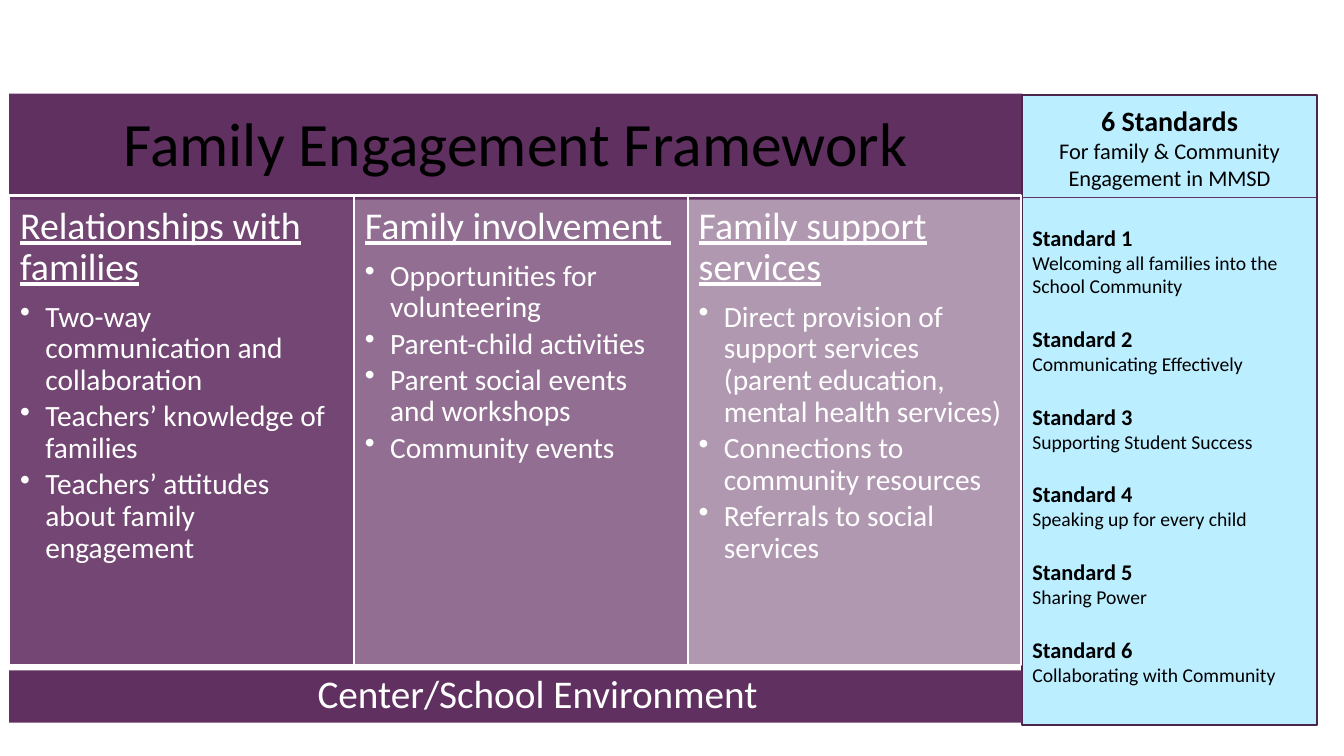
"""Build the Family Engagement Framework slide."""
import pptx
import pptx.dml.color
import pptx.enum.shapes
import pptx.enum.text
import pptx.oxml
import pptx.oxml.ns
import pptx.util
from pptx.util import Inches

TITLE = "Family Engagement Framework"
COLUMNS = [
    ("Relationships with families", 3.42, 90, [
        "Two-way communication and collaboration",
        "Teachers’ knowledge of families",
        "Teachers’ attitudes about family engagement"]),
    ("Family involvement ", 3.31, 70, [
        "Opportunities for volunteering",
        "Parent-child activities",
        "Parent social events and workshops",
        "Community events"]),
    ("Family support services", 3.31, 50, [
        "Direct provision of support services (parent education, mental health services)",
        "Connections to community resources",
        "Referrals to social services"]),
]
FOOTER = "Center/School Environment "
SIDE_TITLE = "6 Standards"
SIDE_SUBTITLE = "For family & Community Engagement in MMSD"
STANDARDS = [
    "Welcoming all families into the School Community",
    "Communicating Effectively",
    "Supporting Student Success",
    "Speaking up for every child",
    "Sharing Power",
    "Collaborating with Community",
]
BAR, PURPLE, SKY, EDGE = "603060", "653265", "BBEEFF", "4B254B"
WHITE, BLACK = "FFFFFF", "000000"
LEFT, MAIN_W = 0.09, 10.05
SIDE_X, SIDE_W = 10.14, 2.92
CENTER = pptx.enum.text.PP_ALIGN.CENTER
TOP = pptx.enum.text.MSO_ANCHOR.TOP
MIDDLE = pptx.enum.text.MSO_ANCHOR.MIDDLE


def rgb(color):
    return pptx.dml.color.RGBColor.from_string(color)


def child(parent, tag, **attrs):
    el = pptx.oxml.ns.qn(tag)
    el = parent.makeelement(el, attrs)
    parent.append(el)
    return el


def add_text(tf, text, size, color=BLACK, bold=False, underline=False, align=None,
             spacing=None, before=0, after=0, bullet=False):
    p = tf.paragraphs[0]
    if p.runs:
        p = tf.add_paragraph()
    p.alignment = align
    p.line_spacing = spacing
    p.space_before, p.space_after = pptx.util.Pt(before), pptx.util.Pt(after)
    if bullet:
        pPr = p._p.get_or_add_pPr()
        pPr.set("marL", str(Inches(0.25)))
        pPr.set("indent", str(Inches(-0.25)))
        child(pPr, "a:buChar", char="•")
    r = p.add_run()
    r.text = text
    r.font.name, r.font.size = "Calibri", pptx.util.Pt(size)
    r.font.bold, r.font.underline = bold, underline
    r.font.color.rgb = rgb(color)


def set_frame(sp, inset_x=0.1, inset_y=0.05, anchor=TOP):
    tf = sp.text_frame
    tf.word_wrap = True
    tf.auto_size = pptx.enum.text.MSO_AUTO_SIZE.NONE
    tf.vertical_anchor = anchor
    tf.margin_left = tf.margin_right = Inches(inset_x)
    tf.margin_top = tf.margin_bottom = Inches(inset_y)
    return tf


def add_rect(s, x, y, w, h, fill, line=None, alpha=None):
    sp = s.shapes.add_shape(pptx.enum.shapes.MSO_SHAPE.RECTANGLE,
                            Inches(x), Inches(y), Inches(w), Inches(h))
    sp.shadow.inherit = False
    sp.fill.solid()
    sp.fill.fore_color.rgb = rgb(fill)
    if alpha:
        clr = sp._element.spPr.find(".//" + pptx.oxml.ns.qn("a:srgbClr"))
        child(clr, "a:alpha", val=str(alpha * 1000))
    if line:
        sp.line.color.rgb = rgb(line)
        sp.line.width = pptx.util.Pt(1.5)
    else:
        sp.line.fill.background()
    return sp


def add_box(s, x, y, w, h):
    return set_frame(s.shapes.add_textbox(Inches(x), Inches(y), Inches(w), Inches(h)))


def add_title(s):
    sp = s.shapes.title
    sp.left, sp.top = Inches(LEFT), Inches(0.93)
    sp.width, sp.height = Inches(MAIN_W), Inches(1.05)
    sp.fill.solid()
    sp.fill.fore_color.rgb = rgb(BAR)
    add_text(set_frame(sp, 0.18, 0.18, MIDDLE), TITLE, 44, align=CENTER, spacing=0.9)


def add_columns(s):
    x = LEFT
    for heading, width, alpha, items in COLUMNS:
        sp = add_rect(s, x, 1.94, width, 4.66, PURPLE, WHITE, alpha)
        tf = set_frame(sp, 0.11, 0.11)
        add_text(tf, heading, 27, WHITE, underline=True, spacing=0.9, after=9.5,
                 align=pptx.enum.text.PP_ALIGN.LEFT)
        for item in items:
            add_text(tf, item, 21, WHITE, spacing=0.9, after=3.15, bullet=True,
                     align=pptx.enum.text.PP_ALIGN.LEFT)
        x += width


def add_sidebar(s):
    tf = add_box(s, SIDE_X, 0.98, SIDE_W, 0.98)
    add_text(tf, SIDE_TITLE, 20, bold=True, align=CENTER)
    add_text(tf, SIDE_SUBTITLE, 16, align=CENTER)
    tf = add_box(s, SIDE_X, 2.17, SIDE_W, 4.71)
    for n, standard in enumerate(STANDARDS, 1):
        add_text(tf, f"Standard {n}", 16, bold=True, before=19.5 if n > 1 else 0)
        add_text(tf, standard, 14)
    rule = s.shapes.add_connector(pptx.enum.shapes.MSO_CONNECTOR.STRAIGHT,
                                  Inches(SIDE_X), Inches(1.96), Inches(13.05), Inches(1.96))
    rule.line.color.rgb = rgb(PURPLE)
    rule.line.width = pptx.util.Pt(1)
    child(rule._element.spPr, "a:effectLst")


def main():
    prs = pptx.Presentation()
    prs.slide_width, prs.slide_height = Inches(13.33), Inches(7.5)
    s = prs.slides.add_slide(prs.slide_layouts[5])
    add_rect(s, SIDE_X, 0.94, SIDE_W, 6.25, SKY, EDGE)
    add_title(s)
    add_columns(s)
    add_rect(s, LEFT, 6.65, MAIN_W, 0.52, BAR)
    add_text(add_box(s, 2.57, 6.59, 5.61, 0.57), FOOTER, 28, WHITE, align=CENTER)
    add_sidebar(s)
    prs.save("out.pptx")


if __name__ == "__main__":
    main()
